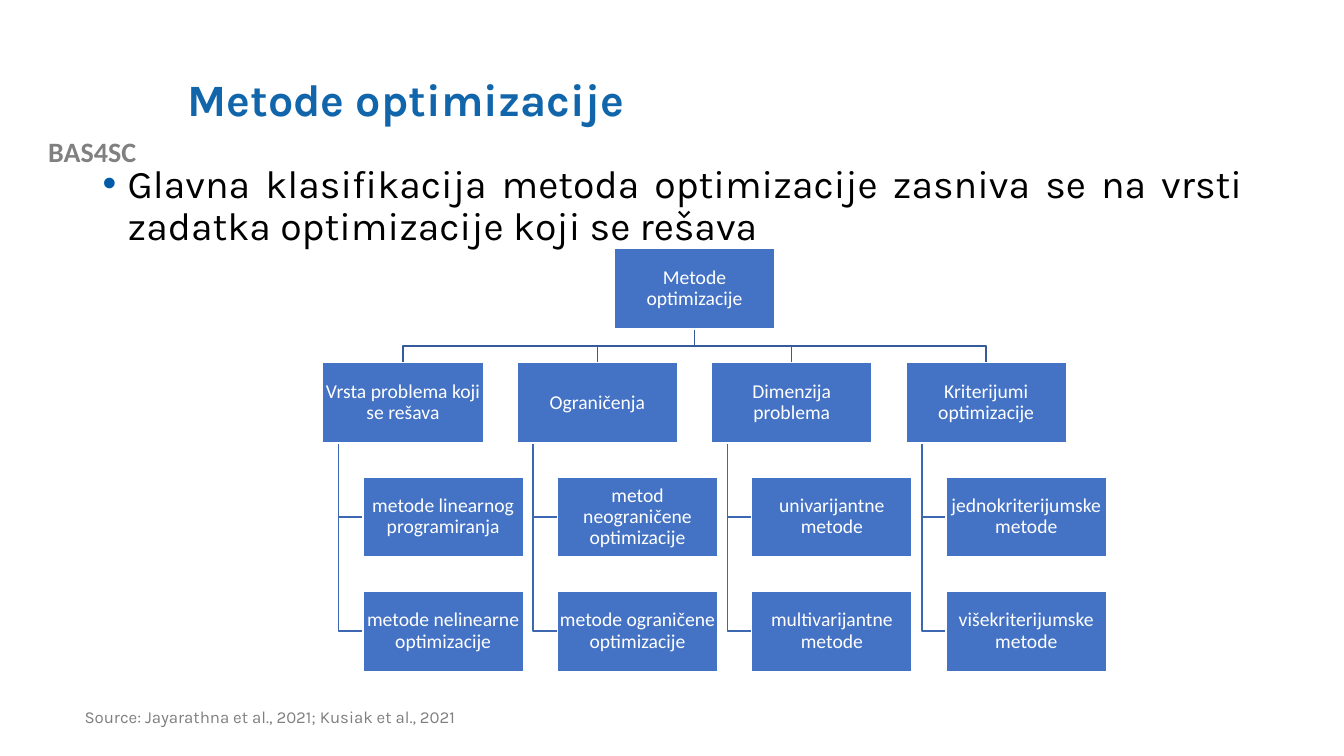
import dataclasses

import lxml.etree
import pptx
import pptx.dml.color
import pptx.enum.shapes
import pptx.enum.text
import pptx.oxml.ns
import pptx.util

Pt = pptx.util.Pt
ALIGN = pptx.enum.text.PP_ALIGN
ANCHOR = pptx.enum.text.MSO_ANCHOR


@dataclasses.dataclass(frozen=True)
class Theme:
    """Hold the colours, fonts and type sizes of the slide."""
    heading_font: str = "Karla"
    chart_font: str = "Calibri"
    title: str = "1065AB"
    bullet: str = "015BA6"
    text: str = "000000"
    label: str = "808080"
    source: str = "7F7F7F"
    box: str = "4472C4"
    white: str = "FFFFFF"
    root_line: str = "365B9D"
    branch_line: str = "3E67B2"
    title_size: int = 32
    body_size: int = 28
    label_size: int = 20
    box_size: int = 14
    source_size: int = 12


THEME = Theme()
ROOT = "Metode optimizacije"
BRANCHES = {
    "Vrsta problema koji se rešava": ["metode linearnog programiranja", "metode nelinearne optimizacije"],
    "Ograničenja": ["metod neograničene optimizacije", "metode ograničene optimizacije"],
    "Dimenzija problema": ["univarijantne metode", "multivarijantne metode"],
    "Kriterijumi optimizacije": ["jednokriterijumske metode", "višekriterijumske metode"],
}


def rgb(value):
    """Return the colour for a hexadecimal value."""
    return pptx.dml.color.RGBColor.from_string(value)


def write(shape, text, size, color, font=THEME.heading_font, bold=False,
          align=ALIGN.LEFT, anchor=ANCHOR.TOP, spacing=0.9):
    """Put one formatted paragraph into a shape and return the paragraph."""
    frame = shape.text_frame
    frame.text = text
    frame.word_wrap = True
    frame.auto_size = pptx.enum.text.MSO_AUTO_SIZE.NONE
    frame.vertical_anchor = anchor
    paragraph = frame.paragraphs[0]
    paragraph.alignment = align
    paragraph.line_spacing = spacing
    paragraph.space_before = Pt(0)
    run_font = paragraph.runs[0].font
    run_font.name, run_font.size, run_font.bold = font, Pt(size), bold
    run_font.color.rgb = rgb(color)
    return paragraph


def add_text(slide, box, *content, **style):
    """Add a text box and return its paragraph."""
    return write(slide.shapes.add_textbox(*map(Pt, box)), *content, **style)


def add_title(slide, box, text):
    """Move and format the title placeholder."""
    title = slide.shapes.title
    title.left, title.top, title.width, title.height = map(Pt, box)
    write(title, text, THEME.title_size, THEME.title, bold=True, anchor=ANCHOR.MIDDLE)


def add_bullet_text(slide, box, text):
    """Add a justified paragraph with a coloured bullet."""
    paragraph = add_text(slide, box, text, THEME.body_size, THEME.text, align=ALIGN.JUSTIFY)
    properties = paragraph._p.get_or_add_pPr()
    properties.set("marL", str(Pt(18)))
    properties.set("indent", str(Pt(-18)))
    qn = pptx.oxml.ns.qn
    color = lxml.etree.SubElement(properties, qn("a:buClr"))
    lxml.etree.SubElement(color, qn("a:srgbClr"), val=THEME.bullet)
    lxml.etree.SubElement(properties, qn("a:buFont"), typeface="Arial")
    lxml.etree.SubElement(properties, qn("a:buChar"), char="•")


def add_node(slide, box, text):
    """Add one labelled rectangle of the tree."""
    node = slide.shapes.add_shape(pptx.enum.shapes.MSO_SHAPE.RECTANGLE, *map(Pt, box))
    node.shadow.inherit = False
    node.fill.solid()
    node.fill.fore_color.rgb = rgb(THEME.box)
    node.line.color.rgb = rgb(THEME.white)
    node.line.width = Pt(1)
    frame = node.text_frame
    frame.margin_left = frame.margin_top = frame.margin_right = frame.margin_bottom = Pt(0.7)
    write(node, text, THEME.box_size, THEME.white, font=THEME.chart_font,
          align=ALIGN.CENTER, anchor=ANCHOR.MIDDLE)


def add_link(slide, points, color):
    """Add an open line with square bends through the points."""
    start, *rest = [(Pt(x), Pt(y)) for x, y in points]
    builder = slide.shapes.build_freeform(*start)
    builder.add_line_segments(rest, close=False)
    link = builder.convert_to_shape()
    link.shadow.inherit = False
    link.fill.background()
    link.line.color.rgb = rgb(color)
    link.line.width = Pt(1)


def add_tree(slide, box, root, branches):
    """Draw the root, its branches and their hanging leaves within the box."""
    left, top, width, _ = box
    count = len(branches)
    node_width = width / (count + 0.21 * (count - 1) + 0.25)
    node_height, gap = node_width / 2, 0.21 * node_width
    column_step, row_step = node_width + gap, node_height + gap
    root_left = left + column_step * (count - 1) / 2
    root_middle, root_bottom = root_left + node_width / 2, top + node_height
    branch_top = top + row_step
    bend = root_bottom + gap / 2
    nodes = [(root_left, top, root)]
    for column, (branch, leaves) in enumerate(branches.items()):
        branch_left = left + column * column_step
        branch_middle = branch_left + node_width / 2
        nodes.append((branch_left, branch_top, branch))
        add_link(slide, [(root_middle, root_bottom), (root_middle, bend),
                         (branch_middle, bend), (branch_middle, branch_top)], THEME.root_line)
        trunk, leaf_left = branch_left + 0.1 * node_width, branch_left + 0.25 * node_width
        for row, leaf in enumerate(leaves, 1):
            leaf_top = branch_top + row * row_step
            leaf_middle = leaf_top + node_height / 2
            nodes.append((leaf_left, leaf_top, leaf))
            add_link(slide, [(trunk, branch_top + node_height), (trunk, leaf_middle),
                             (leaf_left, leaf_middle)], THEME.branch_line)
    for node_left, node_top, text in nodes:
        add_node(slide, (node_left, node_top, node_width, node_height), text)


def main():
    """Build and save the slide."""
    presentation = pptx.Presentation()
    presentation.slide_width, presentation.slide_height = Pt(960), Pt(540)
    slide = presentation.slides.add_slide(presentation.slide_layouts[5])
    add_text(slide, (0, 92.2, 131.8, 31.7), "BAS4SC", THEME.label_size, THEME.label,
             font=THEME.chart_font, bold=True, align=ALIGN.CENTER, spacing=1.0)
    add_title(slide, (126.7, 28.8, 767.5, 87.8), "Metode optimizacije")
    add_bullet_text(slide, (66.2, 113.8, 828, 87.8),
                    "Glavna klasifikacija metoda optimizacije zasniva se na vrsti "
                    "zadatka optimizacije koji se rešava")
    add_text(slide, (53.3, 502.6, 360.7, 37.4),
             "Source: Jayarathna et al., 2021; Kusiak et al., 2021",
             THEME.source_size, THEME.source)
    add_tree(slide, (230.5, 177.7, 560, 302), ROOT, BRANCHES)
    presentation.save("out.pptx")


if __name__ == "__main__":
    main()
